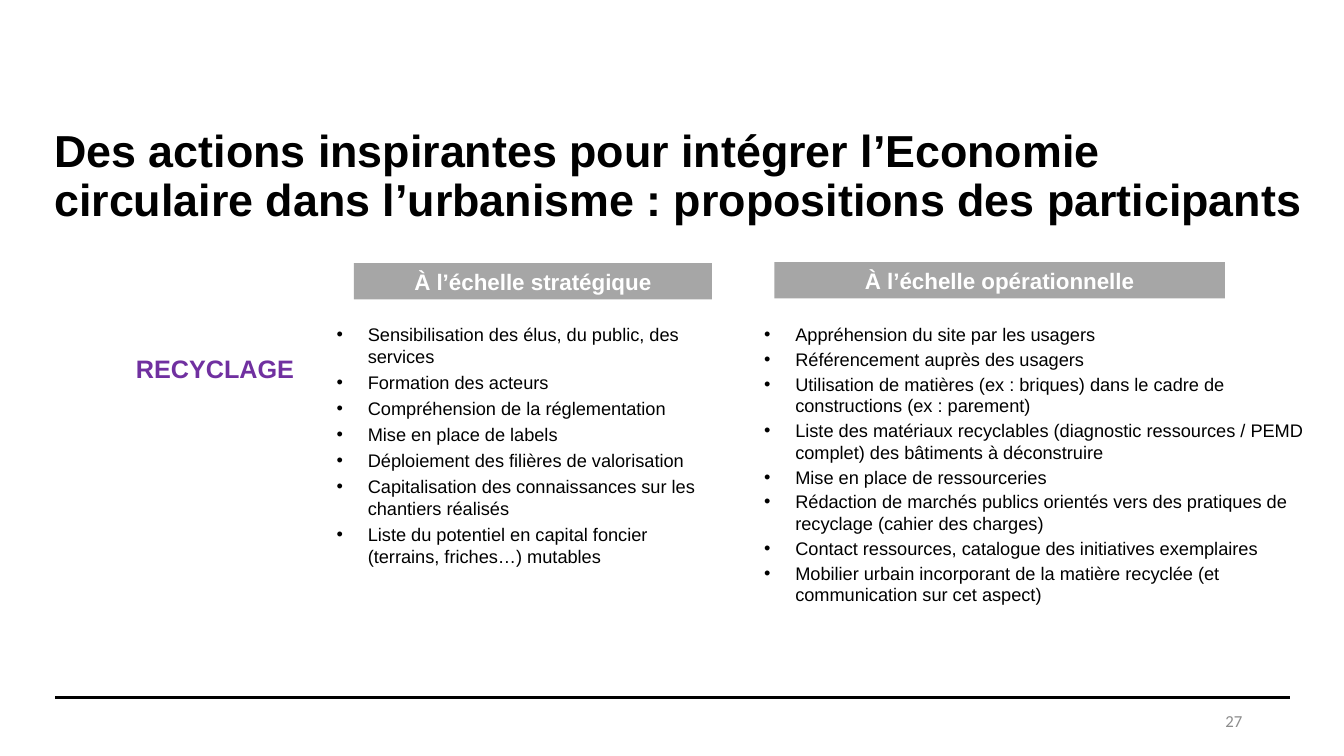
from lxml.etree import SubElement
from pptx import Presentation
from pptx.dml.color import RGBColor
from pptx.enum.shapes import MSO_CONNECTOR, MSO_SHAPE
from pptx.enum.text import MSO_ANCHOR, PP_ALIGN
from pptx.oxml.ns import qn
from pptx.util import Inches, Pt

BLACK = RGBColor(0x00, 0x00, 0x00)
WHITE = RGBColor(0xFF, 0xFF, 0xFF)
BANNER_GRAY = RGBColor(0xA6, 0xA6, 0xA6)
NUMBER_GRAY = RGBColor(0x8C, 0x8C, 0x8C)
PURPLE = RGBColor(0x70, 0x30, 0xA0)
BULLET_INDENT = Inches(0.31)

TITLE = ("Des actions inspirantes pour intégrer l’Economie circulaire "
         "dans l’urbanisme : propositions des participants")
STRATEGIC_ACTIONS = [
    "Sensibilisation des élus, du public, des services",
    "Formation des acteurs",
    "Compréhension de la réglementation",
    "Mise en place de labels",
    "Déploiement des filières de valorisation",
    "Capitalisation des connaissances sur les chantiers réalisés",
    "Liste du potentiel en capital foncier (terrains, friches…) mutables",
]
OPERATIONAL_ACTIONS = [
    "Appréhension du site par les usagers",
    "Référencement auprès des usagers",
    "Utilisation de matières (ex : briques) dans le cadre de constructions (ex : parement)",
    "Liste des matériaux recyclables (diagnostic ressources / PEMD complet) "
    "des bâtiments à déconstruire",
    "Mise en place de ressourceries",
    "Rédaction de marchés publics orientés vers des pratiques de recyclage "
    "(cahier des charges)",
    "Contact ressources, catalogue des initiatives exemplaires",
    "Mobilier urbain incorporant de la matière recyclée (et communication sur cet aspect)",
]


def inches(box):
    return [Inches(length) for length in box]


def style(paragraph, size, color, bold=False, font="Arial", align=PP_ALIGN.LEFT):
    paragraph.alignment = align
    for run in paragraph.runs:
        run.font.name = font
        run.font.size = Pt(size)
        run.font.bold = bold
        run.font.color.rgb = color


def add_label(slide, box, text, size, color, anchor=MSO_ANCHOR.TOP, wrap=True, **look):
    """Add a one-paragraph text box and return its paragraph."""
    frame = slide.shapes.add_textbox(*inches(box)).text_frame
    frame.word_wrap = wrap
    frame.vertical_anchor = anchor
    frame.text = text
    style(frame.paragraphs[0], size, color, **look)
    return frame.paragraphs[0]


def add_banner(slide, box, heading):
    banner = slide.shapes.add_shape(MSO_SHAPE.RECTANGLE, *inches(box))
    banner.shadow.inherit = False
    banner.fill.solid()
    banner.fill.fore_color.rgb = BANNER_GRAY
    banner.line.fill.background()
    banner.text_frame.vertical_anchor = MSO_ANCHOR.TOP
    banner.text_frame.text = heading
    style(banner.text_frame.paragraphs[0], 16, WHITE, bold=True, align=PP_ALIGN.CENTER)


def add_bullet(paragraph):
    properties = paragraph._p.get_or_add_pPr()
    properties.set("marL", str(BULLET_INDENT))
    properties.set("indent", str(-BULLET_INDENT))
    bullet_color = SubElement(properties, qn("a:buClr"))
    SubElement(bullet_color, qn("a:srgbClr")).set("val", str(BLACK))
    SubElement(properties, qn("a:buFont")).set("typeface", "Arial")
    SubElement(properties, qn("a:buChar")).set("char", "•")


def add_action_list(slide, box, actions, gap):
    frame = slide.shapes.add_textbox(*inches(box)).text_frame
    frame.word_wrap = True
    frame.text = "\n".join(actions)
    for paragraph in frame.paragraphs:
        add_bullet(paragraph)
        paragraph.space_after = Pt(gap)
        style(paragraph, 13, BLACK)


def add_footer(slide, left, top, width, number):
    rule = slide.shapes.add_connector(
        MSO_CONNECTOR.STRAIGHT, *inches((left, top, left + width, top)))
    rule.line.color.rgb = BLACK
    rule.line.width = Pt(1.5)
    SubElement(rule._element.spPr, qn("a:effectLst"))
    add_label(slide, (left + width - 3.37, top + 0.03, 3, 0.4), number, 12, NUMBER_GRAY,
              anchor=MSO_ANCHOR.MIDDLE, font="Calibri", align=PP_ALIGN.RIGHT)


def build_actions_slide(presentation):
    slide = presentation.slides.add_slide(presentation.slide_layouts[6])
    add_footer(slide, 0.55, 6.92, 12.24, "27")
    title = add_label(slide, (0.44, 0.84, 12.61, 1.45), TITLE, 32, BLACK,
                      anchor=MSO_ANCHOR.BOTTOM, bold=True)
    title.line_spacing = 0.9
    add_label(slide, (1.25, 3.46, 1.77, 0.4), "RECYCLAGE", 18, PURPLE,
              wrap=False, bold=True)
    add_banner(slide, (3.51, 2.61, 3.55, 0.36), "À l’échelle stratégique")
    add_action_list(slide, (3.24, 3.16, 3.9, 2.54), STRATEGIC_ACTIONS, gap=3)
    add_banner(slide, (7.68, 2.6, 4.47, 0.36), "À l’échelle opérationnelle")
    add_action_list(slide, (7.48, 3.16, 5.57, 2.92), OPERATIONAL_ACTIONS, gap=2)


def main():
    presentation = Presentation()
    presentation.slide_width = Inches(13.33)
    presentation.slide_height = Inches(7.5)
    build_actions_slide(presentation)
    presentation.save("out.pptx")


if __name__ == "__main__":
    main()
